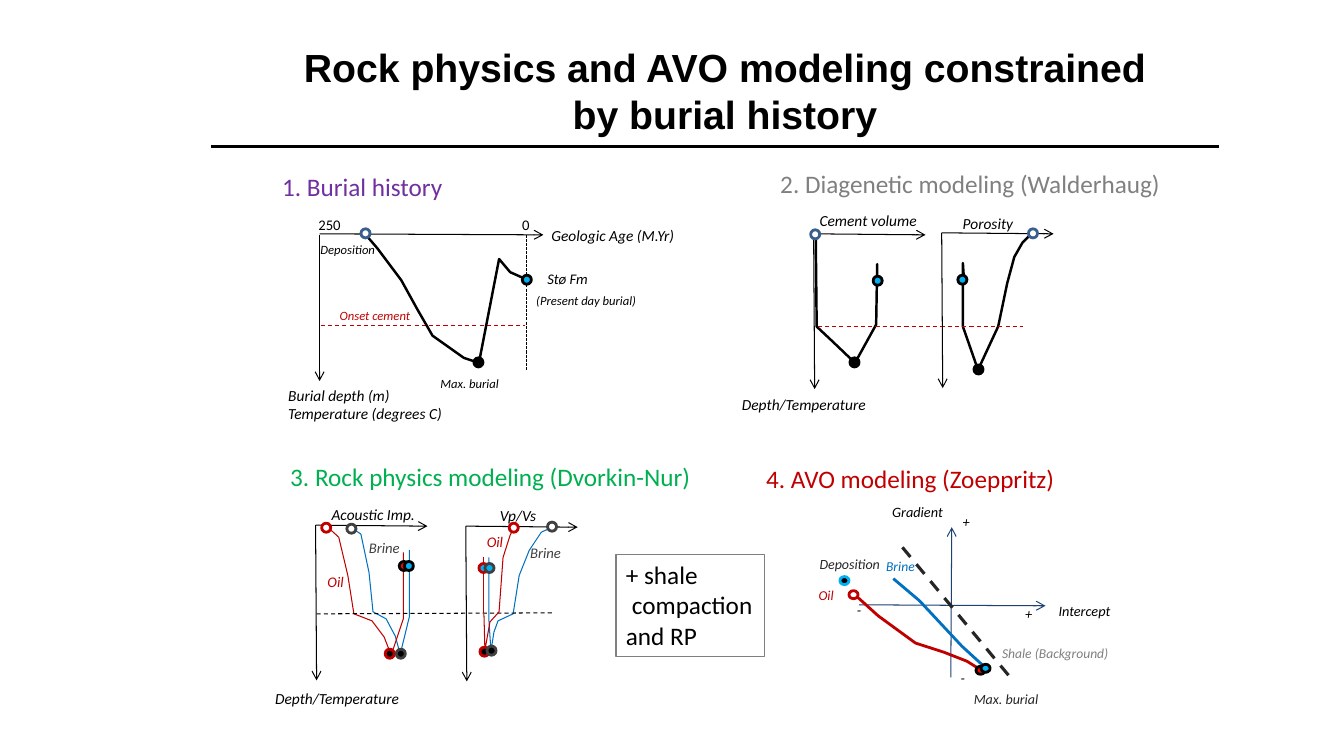
import lxml.etree
import pptx
import pptx.dml.color
import pptx.enum.dml
import pptx.enum.shapes
import pptx.enum.text
import pptx.oxml.ns
import pptx.util

PX = 9144
RGB = pptx.dml.color.RGBColor
BLACK = RGB(0x00, 0x00, 0x00)
WHITE = RGB(0xFF, 0xFF, 0xFF)
CHARCOAL = RGB(0x26, 0x26, 0x26)
DARK_GRAY = RGB(0x40, 0x40, 0x40)
GRAY = RGB(0x80, 0x80, 0x80)
PURPLE = RGB(0x70, 0x30, 0xA0)
GREEN = RGB(0x00, 0xB0, 0x50)
DARK_RED = RGB(0xC0, 0x00, 0x00)
RED = RGB(0xFF, 0x00, 0x00)
BLUE = RGB(0x00, 0x70, 0xC0)
SKY = RGB(0x00, 0xB0, 0xF0)
STEEL = RGB(0x3A, 0x5F, 0x8C)
NAVY = RGB(0x1C, 0x42, 0x70)
DASH = pptx.enum.dml.MSO_LINE.DASH
SHORT_DASH = pptx.enum.dml.MSO_LINE.SQUARE_DOT
CALIBRI = {"name": "Calibri", "bold": False, "italic": False}
ITALIC = {**CALIBRI, "italic": True}
TITLE = {"name": "Arial", "bold": True, "italic": False}


def set_line(line, color, weight):
    line.color.rgb = color
    line.width = pptx.util.Pt(weight)


def set_fonts(frame, size, color, style):
    for paragraph in frame.paragraphs:
        for run in paragraph.runs:
            for attribute, value in {**style, "size": pptx.util.Pt(size)}.items():
                setattr(run.font, attribute, value)
            run.font.color.rgb = color


class Region:
    def __init__(self, shapes, left, top):
        self.shapes = shapes
        self.left = left
        self.top = top

    def at(self, x, y):
        return (self.left + x) * PX, (self.top + y) * PX

    def label(self, x, y, width, words, size=11, color=BLACK, style=ITALIC):
        height = round(size * 1.69 * len(words.split("\n")) + 10)
        box = self.shapes.add_textbox(*self.at(x, y), width * PX, height * PX)
        frame = box.text_frame
        frame.text = words
        frame.word_wrap = False
        frame.auto_size = pptx.enum.text.MSO_AUTO_SIZE.SHAPE_TO_FIT_TEXT
        set_fonts(frame, size, color, style)
        return box

    def heading(self, x, y, width, words, color):
        self.label(x, y, width, words, 18, color, CALIBRI)

    def line(self, start, end, color=BLACK, weight=0.75, dash=None, arrow=False):
        connector = self.shapes.add_connector(
            pptx.enum.shapes.MSO_CONNECTOR.STRAIGHT, *self.at(*start), *self.at(*end))
        set_line(connector.line, color, weight)
        if dash:
            connector.line.dash_style = dash
        qn = pptx.oxml.ns.qn
        properties = connector._element.spPr
        if arrow:
            lxml.etree.SubElement(properties.find(qn("a:ln")), qn("a:tailEnd"), type="arrow")
        lxml.etree.SubElement(properties, qn("a:effectLst"))

    def depth_axes(self, x, y):
        self.line((x, y), (x + 111, y + 1), arrow=True)
        self.line((x, y), (x + 1, y + 154), arrow=True)

    def curve(self, points, color=BLACK, weight=1.75):
        start, *rest = [(self.left + x, self.top + y) for x, y in points]
        builder = self.shapes.build_freeform(*start, scale=PX)
        builder.add_line_segments(rest, close=False)
        trend = builder.convert_to_shape()
        trend.fill.background()
        trend.shadow.inherit = False
        set_line(trend.line, color, weight)

    def dots(self, entries, height=9):
        for x, y, fill, outline in entries:
            dot = self.shapes.add_shape(
                pptx.enum.shapes.MSO_SHAPE.OVAL, *self.at(x, y), 9 * PX, height * PX)
            dot.shadow.inherit = False
            dot.fill.solid()
            dot.fill.fore_color.rgb = fill
            set_line(dot.line, outline, 2)


def slide_title(shapes, left, top):
    region = Region(shapes, left, top)
    box = shapes.add_textbox(*region.at(60, 0), 900 * PX, 84 * PX)
    frame = box.text_frame
    frame.text = "Rock physics and AVO modeling constrained by burial history"
    frame.word_wrap = True
    frame.vertical_anchor = pptx.enum.text.MSO_ANCHOR.MIDDLE
    frame.paragraphs[0].alignment = pptx.enum.text.PP_ALIGN.CENTER
    set_fonts(frame, 28, BLACK, TITLE)
    region.line((0, 97), (1000, 97), weight=2.25)


def burial_history(shapes, left, top):
    region = Region(shapes, left, top)
    region.heading(20, 15, 187, "1. Burial history", PURPLE)
    region.line((272, 83), (272, 218), dash=SHORT_DASH)
    region.line((67, 82), (289, 83), arrow=True)
    region.line((67, 83), (67, 228), arrow=True)
    region.line((68, 173), (271, 173), DARK_RED, dash=DASH)
    region.curve([(112, 82), (124, 96), (148, 128), (164, 157), (179, 183), (210, 205),
                  (225, 210), (245, 107), (256, 120), (274, 128)])
    region.dots([(108, 77, WHITE, STEEL), (220, 205, BLACK, BLACK), (268, 123, SKY, BLACK)])
    region.label(26, 228, 175, "Burial depth (m)\nTemperature (degrees C)")
    region.label(287, 69, 145, "Geologic Age (M.Yr)")
    region.label(258, 59, 28, "0", 10.5, style=CALIBRI)
    region.label(56, 59, 43, "250", 10.5, style=CALIBRI)
    region.label(283, 113, 63, "Stø Fm", 10.5)
    region.label(58, 85, 75, "Deposition", 9)
    region.label(177, 218, 79, "Max. burial", 9)
    region.label(272, 136, 120, "(Present day burial)", 9)
    region.label(77, 151, 91, "Onset cement", 9, DARK_RED)


def diagenetic_modeling(shapes, left, top):
    region = Region(shapes, left, top)
    region.heading(64, 12, 402, "2. Diagenetic modeling (Walderhaug)", GRAY)
    region.label(103, 55, 117, "Cement volume")
    region.label(245, 57, 71, "Porosity")
    region.label(26, 237, 145, "Depth/Temperature")
    region.curve([(109, 81), (110, 174), (126, 189), (148, 210), (169, 172), (170, 112),
                  (170, 131)])
    region.curve([(327, 81), (321, 84), (314, 91), (306, 105), (299, 131), (290, 174),
                  (283, 189), (270, 217), (255, 174), (255, 111), (256, 126)])
    region.line((111, 174), (315, 174), DARK_RED, dash=DASH)
    region.depth_axes(107, 82)
    region.depth_axes(234, 81)
    region.dots([(143, 205, BLACK, BLACK), (166, 124, SKY, BLACK), (104, 78, WHITE, STEEL),
                 (250, 123, SKY, BLACK), (266, 212, BLACK, BLACK), (320, 77, WHITE, STEEL)])


def rock_physics_modeling(shapes, left, top):
    region = Region(shapes, left, top)
    region.heading(28, 3, 422, "3. Rock physics modeling (Dvorkin-Nur)", GREEN)
    region.label(69, 46, 104, "Acoustic Imp.")
    region.label(236, 47, 58, "Vp/Vs")
    region.label(13, 229, 145, "Depth/Temperature")
    region.depth_axes(63, 71)
    region.depth_axes(212, 72)
    region.curve([(98, 73), (108, 80), (116, 118), (120, 157), (133, 164), (142, 181),
                  (147, 199), (156, 162), (156, 96), (156, 117)], BLUE, 0.75)
    region.curve([(75, 73), (86, 83), (95, 121), (101, 159), (119, 166), (131, 182),
                  (138, 200), (150, 164), (150, 98)], DARK_RED, 0.75)
    region.dots([(69, 69, WHITE, DARK_RED), (94, 70, WHITE, DARK_GRAY),
                 (132, 194, BLACK, DARK_RED), (143, 194, BLACK, DARK_GRAY),
                 (146, 107, RED, BLACK), (151, 107, SKY, BLACK)])
    region.curve([(298, 73), (287, 78), (275, 96), (265, 121), (259, 159), (244, 166),
                  (240, 177), (237, 196), (235, 166), (235, 103)], BLUE, 0.75)
    region.line((64, 159), (298, 158), dash=DASH)
    region.curve([(260, 73), (256, 81), (249, 103), (245, 157), (236, 167), (231, 195),
                  (230, 159)], DARK_RED, 0.75)
    region.line((230, 158), (230, 103), DARK_RED)
    region.dots([(225, 109, SKY, DARK_RED), (231, 109, SKY, DARK_GRAY),
                 (226, 192, BLACK, DARK_RED), (233, 191, BLACK, DARK_GRAY),
                 (255, 69, WHITE, DARK_RED), (293, 68, WHITE, DARK_GRAY)])
    for x, y in ((65, 113), (223, 74)):
        region.label(x, y, 37, "Oil", 10.5, DARK_RED)
    for x, y in ((106, 80), (266, 85)):
        region.label(x, y, 51, "Brine", 10.5, DARK_GRAY)


def shale_note(shapes, left, top):
    region = Region(shapes, left, top)
    note = region.label(0, 0, 147, "+ shale\ncompaction\nand RP", 18, style=CALIBRI)
    set_line(note.line, GRAY, 0.75)
    compaction = note.text_frame.paragraphs[1]
    compaction._p.get_or_add_pPr().set("marL", str(6 * PX))


def avo_modeling(shapes, left, top):
    Region(shapes, left, top).heading(0, 5, 309, "4. AVO modeling (Zoeppritz)", DARK_RED)
    region = Region(shapes.add_group_shape().shapes, left, top)
    region.line((193, 222), (194, 73), NAVY, arrow=True)
    region.line((102, 150), (287, 151), NAVY, arrow=True)
    for x, y, width, words in ((290, 143, 72, "Intercept"), (257, 146, 27, "+"),
                               (90, 142, 25, "-"), (195, 54, 27, "+"),
                               (193, 209, 25, "-"), (125, 44, 71, "Gradient")):
        region.label(x, y, width, words, 10.2)
    region.line((145, 93), (252, 222), CHARCOAL, 2.25, DASH)
    region.curve([(136, 124), (162, 146), (204, 191), (228, 213)], BLUE, 2)
    region.curve([(100, 142), (121, 161), (158, 188), (186, 197), (209, 206), (225, 216)],
                 DARK_RED, 2)
    region.dots([(92, 136, WHITE, DARK_RED), (218, 211, RED, BLACK),
                 (223, 209, SKY, BLACK), (83, 122, BLACK, SKY)], height=8)
    region.label(53, 96, 81, "Deposition", 10, CHARCOAL)
    region.label(119, 99, 49, "Brine", 9.7, BLUE)
    region.label(52, 127, 35, "Oil", 9.7, DARK_RED)
    region.label(234, 185, 127, "Shale (Background)", 9.7, GRAY)
    region.label(206, 230, 85, "Max. burial", 10, CHARCOAL)


def main():
    deck = pptx.Presentation()
    deck.slide_width = 1333 * PX
    deck.slide_height = 750 * PX
    shapes = deck.slides.add_slide(deck.slide_layouts[6]).shapes
    slide_title(shapes, 209, 48)
    burial_history(shapes, 250, 150)
    diagenetic_modeling(shapes, 700, 150)
    rock_physics_modeling(shapes, 250, 450)
    shale_note(shapes, 611, 550)
    avo_modeling(shapes, 750, 450)
    deck.save("out.pptx")


if __name__ == "__main__":
    main()
